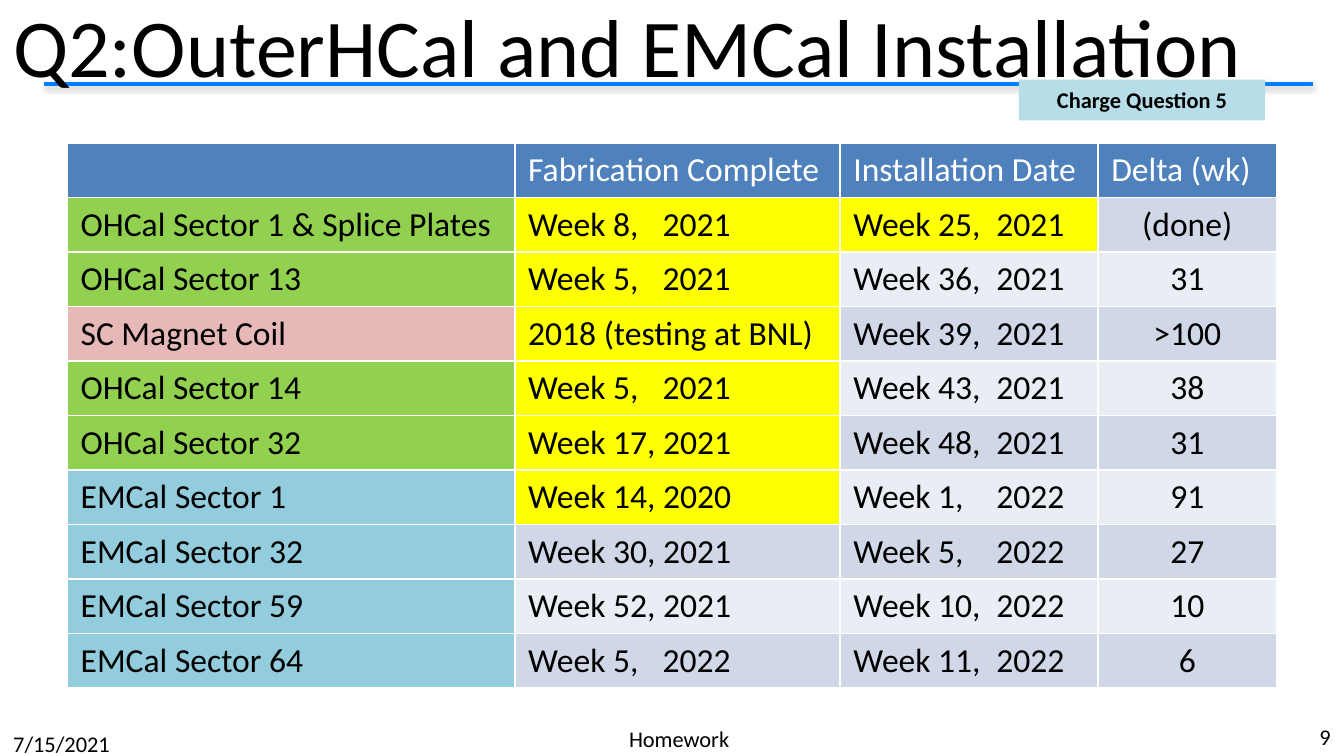
from dataclasses import dataclass
from typing import Any

from lxml.etree import SubElement as Sub
from pptx import Presentation as Deck
from pptx.dml.color import RGBColor as RGB
from pptx.enum.shapes import MSO_CONNECTOR as Link, MSO_SHAPE as Form
from pptx.enum.text import MSO_ANCHOR as Anchor, PP_ALIGN as Align
from pptx.oxml.ns import qn
from pptx.util import Pt

HUES = {
    "black": "000000", "white": "FFFFFF", "rule": "0080FF", "shade": "808080",
    "head": "4F81BD", "outer": "92D050", "coil": "E6B9B8", "inner": "93CDDD",
    "done": "FFFF00", "odd": "D0D8E8", "even": "E9EDF4", "badge": "B7DEE8",
}
HEADS = ("", "Fabrication Complete", "Installation Date", "Delta (wk)")
WIDTHS = (239.8, 174.2, 138.2, 95.8)
STOPS = (0, 72, 76.6, 0)
HIGH = 29.2


@dataclass
class Row:
    """One part with its dates and the count of dates already met."""
    hue: str
    name: str
    built: str
    fit: str
    delta: str
    met: int = 0


@dataclass
class Label:
    """One line of text in a box."""
    text: str
    left: float
    top: float
    width: float
    height: float
    size: float = 12
    align: Any = Align.LEFT
    bold: bool = False
    fill: str = ""


ROWS = (
    Row("outer", "OHCal Sector 1 & Splice Plates", "Week 8,\t2021", "Week 25,\t2021", "(done)", 2),
    Row("outer", "OHCal Sector 13", "Week 5,\t2021", "Week 36,\t2021", "31", 1),
    Row("coil", "SC Magnet Coil", "2018 (testing at BNL)", "Week 39,\t2021", ">100", 1),
    Row("outer", "OHCal Sector 14", "Week 5,\t2021", "Week 43,\t2021", "38", 1),
    Row("outer", "OHCal Sector 32", "Week 17, 2021", "Week 48,\t2021", "31", 1),
    Row("inner", "EMCal Sector 1", "Week 14, 2020", "Week 1,\t2022", "91", 1),
    Row("inner", "EMCal Sector 32", "Week 30, 2021", "Week 5,\t2022", "27"),
    Row("inner", "EMCal Sector 59", "Week 52, 2021", "Week 10,\t2022", "10"),
    Row("inner", "EMCal Sector 64", "Week 5,\t2022", "Week 11,\t2022", "6"),
)
LABELS = (
    Label("Q2:OuterHCal and EMCal Installation", 0, 2.2, 684, 43.2, 44),
    Label("7/15/2021", 0, 391.7, 167.8, 13.7),
    Label("Homework", 249.8, 387.4, 228.2, 16.6, align=Align.CENTER),
    Label("9", 678.2, 383.8, 41.8, 21.6, align=Align.RIGHT),
    Label("Charge Question 5", 545.8, 42.7, 132, 21.8, align=Align.CENTER, bold=True, fill="badge"),
)


def tint(hue: str) -> RGB:
    """Return a named colour."""
    return RGB.from_string(HUES[hue])


def paint(item: Any, hue: str) -> None:
    """Fill a shape or cell with one colour."""
    item.fill.solid()
    item.fill.fore_color.rgb = tint(hue)


def write(frame: Any, text: str, size: float, hue: str = "black",
          align: Any = Align.LEFT, bold: bool = False, stop: float = 0) -> None:
    """Write one styled line into a text frame."""
    para = frame.paragraphs[0]
    para.alignment = align
    if "\t" in text:
        tabs = Sub(para._p.get_or_add_pPr(), qn("a:tabLst"))
        Sub(tabs, qn("a:tab"), pos=str(int(Pt(stop))), algn="l")
    run = para.add_run()
    run.text = text
    style = {"name": "Calibri", "size": Pt(size), "bold": bold}
    for key, value in style.items():
        setattr(run.font, key, value)
    run.font.color.rgb = tint(hue)


def draw_rule(slide: Any) -> None:
    """Draw the blue line with its soft shadow."""
    line = slide.shapes.add_connector(Link.STRAIGHT, Pt(23.8), Pt(44.8), Pt(703.4), Pt(44.8))
    line.line.color.rgb = tint("rule")
    line.line.width = Pt(2.25)
    glow = Sub(line._element.spPr, qn("a:effectLst"))
    cast = Sub(glow, qn("a:outerShdw"), blurRad=str(int(Pt(3.1))),
               dist=str(int(Pt(1.6))), dir="5400000", rotWithShape="0")
    shade = Sub(cast, qn("a:srgbClr"), val=HUES["shade"])
    Sub(shade, qn("a:alpha"), val="38000")


def draw_label(slide: Any, label: Label) -> None:
    """Draw a text box, or a filled box when a fill is named."""
    spot = [Pt(n) for n in (label.left, label.top, label.width, label.height)]
    if label.fill:
        box = slide.shapes.add_shape(Form.RECTANGLE, *spot)
        box.shadow.inherit = False
        box.line.fill.background()
        paint(box, label.fill)
    else:
        box = slide.shapes.add_textbox(*spot)
    frame = box.text_frame
    style = {"word_wrap": True, "vertical_anchor": Anchor.MIDDLE}
    for key, value in style.items():
        setattr(frame, key, value)
    write(frame, label.text, label.size, align=label.align, bold=label.bold)


def draw_table(slide: Any) -> None:
    """Draw the schedule, marking the dates already met."""
    count = len(ROWS) + 1
    grid = slide.shapes.add_table(count, len(HEADS), Pt(36), Pt(76.6),
                                  Pt(sum(WIDTHS)), Pt(HIGH * count)).table
    for col, width in zip(grid.columns, WIDTHS):
        col.width = Pt(width)
    for line in grid.rows:
        line.height = Pt(HIGH)
    for col, head in enumerate(HEADS):
        cell = grid.cell(0, col)
        paint(cell, "head")
        if head:
            write(cell.text_frame, head, 18, "white")
    for num, row in enumerate(ROWS, 1):
        band = "odd" if num % 2 else "even"
        dates = ["done" if n < row.met else band for n in range(2)]
        fills = (row.hue, *dates, band)
        texts = (row.name, row.built, row.fit, row.delta)
        for col, (text, fill, stop) in enumerate(zip(texts, fills, STOPS)):
            cell = grid.cell(num, col)
            paint(cell, fill)
            align = Align.CENTER if col == 3 else Align.LEFT
            write(cell.text_frame, text, 18, align=align, stop=stop)


def main() -> None:
    """Build and save the slide."""
    deck = Deck()
    deck.slide_width, deck.slide_height = Pt(720), Pt(405)
    slide = deck.slides.add_slide(deck.slide_layouts[6])
    draw_rule(slide)
    draw_table(slide)
    for label in LABELS:
        draw_label(slide, label)
    deck.save("out.pptx")


if __name__ == "__main__":
    main()
